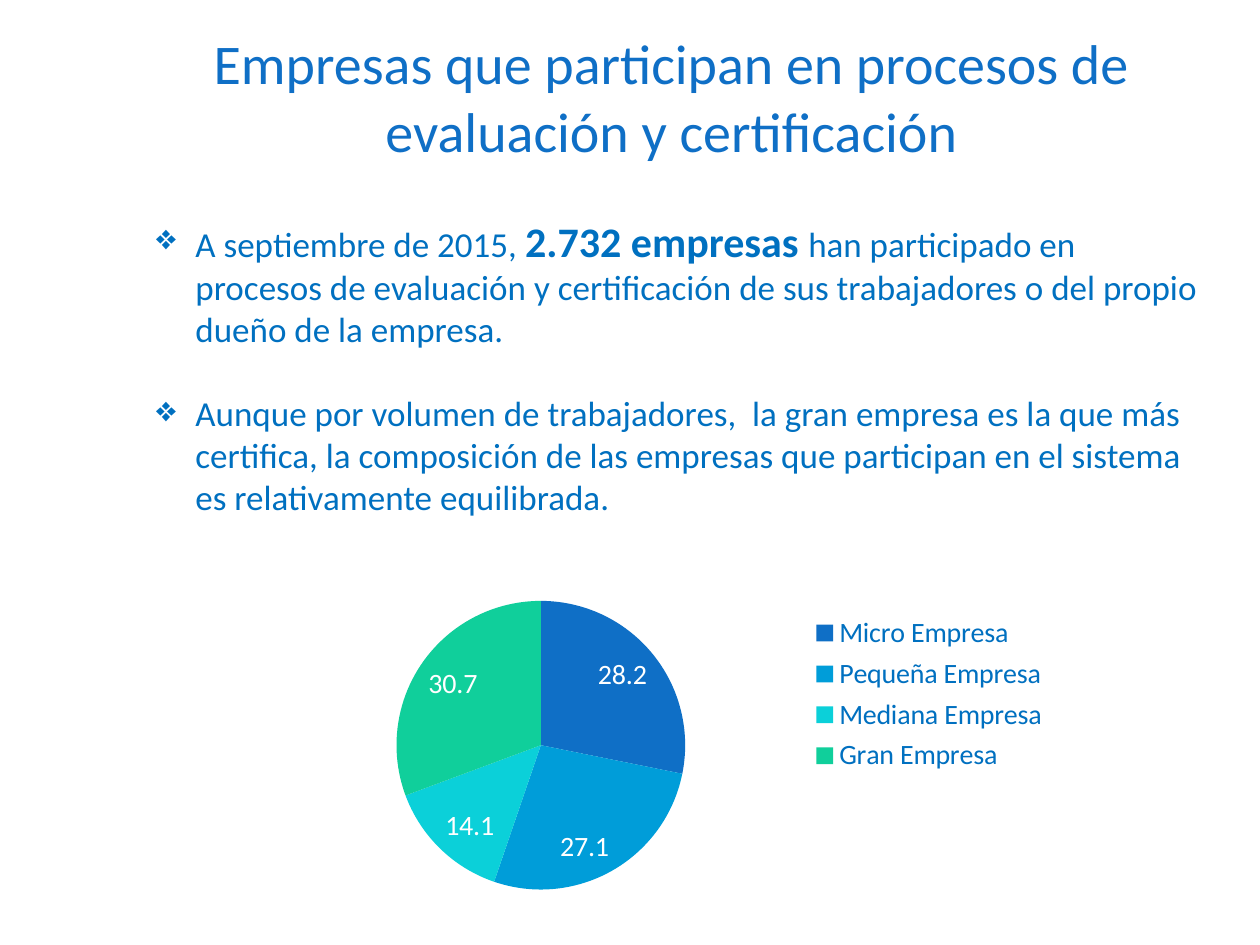
import pptx
import pptx.chart.data
import pptx.dml.color
import pptx.enum.chart
import pptx.enum.text
import pptx.oxml
import pptx.oxml.ns
import pptx.util
from dataclasses import dataclass

Cm = pptx.util.Cm
Pt = pptx.util.Pt
RGB = pptx.dml.color.RGBColor.from_string


@dataclass(frozen=True)
class Theme:
    face: str = "Calibri"
    head: str = "0F6FC6"
    ink: str = "0070C0"
    label: str = "FFFFFF"
    slices: tuple = ("0F6FC6", "009DD9", "0BD0D9", "10CF9B")
    title: int = 32
    strong: int = 24
    body: int = 20
    small: int = 16


THEME = Theme()


def style(font, size, color, bold=False):
    font.name = THEME.face
    font.size = Pt(size)
    font.bold = bold
    font.color.rgb = RGB(color)


def add_text(slide, box):
    frame = slide.shapes.add_textbox(*map(Cm, box)).text_frame
    frame.word_wrap = True
    return frame


def add_title(slide, box, text):
    frame = add_text(slide, box)
    frame.text = text
    line = frame.paragraphs[0]
    line.alignment = pptx.enum.text.PP_ALIGN.CENTER
    style(line.runs[0].font, THEME.title, THEME.head)


def set_bullet(para, mark, indent):
    props = para._p.get_or_add_pPr()
    props.set("marL", str(Cm(indent)))
    props.set("indent", str(-Cm(indent)))
    space = pptx.oxml.ns.nsdecls("a")
    props.append(pptx.oxml.parse_xml(f'<a:buChar {space} char="{mark}"/>'))


def add_points(slide, box, points):
    frame = add_text(slide, box)
    for i, parts in enumerate(points):
        para = frame.add_paragraph() if i else frame.paragraphs[0]
        if i:
            para.space_before = Pt(24)
        set_bullet(para, "❖", 0.79)
        for text, bold in parts:
            run = para.add_run()
            run.text = text
            size = THEME.strong if bold else THEME.body
            style(run.font, size, THEME.ink, bold)


def set_layout(parent, index, area, inner=False):
    for old in parent.findall(pptx.oxml.ns.qn("c:layout")):
        parent.remove(old)
    target = '<c:layoutTarget val="inner"/>' if inner else ""
    modes = "".join(f'<c:{k}Mode val="edge"/>' for k in "xy")
    sizes = "".join(f'<c:{k} val="{v}"/>' for k, v in zip("xywh", area))
    space = pptx.oxml.ns.nsdecls("c")
    parent.insert(index, pptx.oxml.parse_xml(
        f"<c:layout {space}><c:manualLayout>{target}{modes}{sizes}"
        "</c:manualLayout></c:layout>"))


def add_pie(slide, box, shares):
    data = pptx.chart.data.CategoryChartData(number_format="0.0")
    data.categories = list(shares)
    data.add_series("Series 1", list(shares.values()))
    kind = pptx.enum.chart.XL_CHART_TYPE.PIE
    chart = slide.shapes.add_chart(kind, *map(Cm, box), data).chart
    style(chart.font, THEME.small, THEME.ink)
    chart.has_title = False

    chart.has_legend = True
    legend = chart.legend
    legend.position = pptx.enum.chart.XL_LEGEND_POSITION.RIGHT
    legend.include_in_layout = False
    style(legend.font, THEME.small, THEME.ink)
    set_layout(legend._element, 1, (0.75, 0.29, 0.24, 0.42))

    plot = chart.plots[0]
    plot.vary_by_categories = True
    set_layout(plot._element.getparent(), 0, (0.01, 0.27, 0.94, 0.71), True)
    for i, color in enumerate(THEME.slices):
        fill = plot.series[0].points[i].format.fill
        fill.solid()
        fill.fore_color.rgb = RGB(color)

    plot.has_data_labels = True
    labels = plot.data_labels
    labels.show_value = True
    labels.show_percentage = False
    labels.number_format = "0.0"
    labels.number_format_is_linked = False
    labels.position = pptx.enum.chart.XL_LABEL_POSITION.INSIDE_END
    style(labels.font, THEME.small, THEME.label)


def main():
    deck = pptx.Presentation()
    deck.slide_width, deck.slide_height = Cm(25.4), Cm(19.05)
    slide = deck.slides.add_slide(deck.slide_layouts[6])
    add_title(slide, (2.77, 0.46, 21.54, 2.06),
              "Empresas que participan en procesos de evaluación y certificación")
    add_points(slide, (2.9, 4.22, 21.49, 6.4), [
        [("A septiembre de 2015, ", False),
         ("2.732 empresas ", True),
         ("han participado en procesos de evaluación y certificación de sus "
          "trabajadores o del propio dueño de la empresa.", False)],
        [("Aunque por volumen de trabajadores,  la gran empresa es la que más "
          "certifica, la composición de las empresas que participan en el "
          "sistema es relativamente equilibrada.", False)],
    ])
    add_pie(slide, (1.27, 9.9, 20.07, 8.2), {
        "Micro Empresa": 28.2,
        "Pequeña Empresa": 27.1,
        "Mediana Empresa": 14.1,
        "Gran Empresa": 30.7,
    })
    deck.save("out.pptx")


if __name__ == "__main__":
    main()
